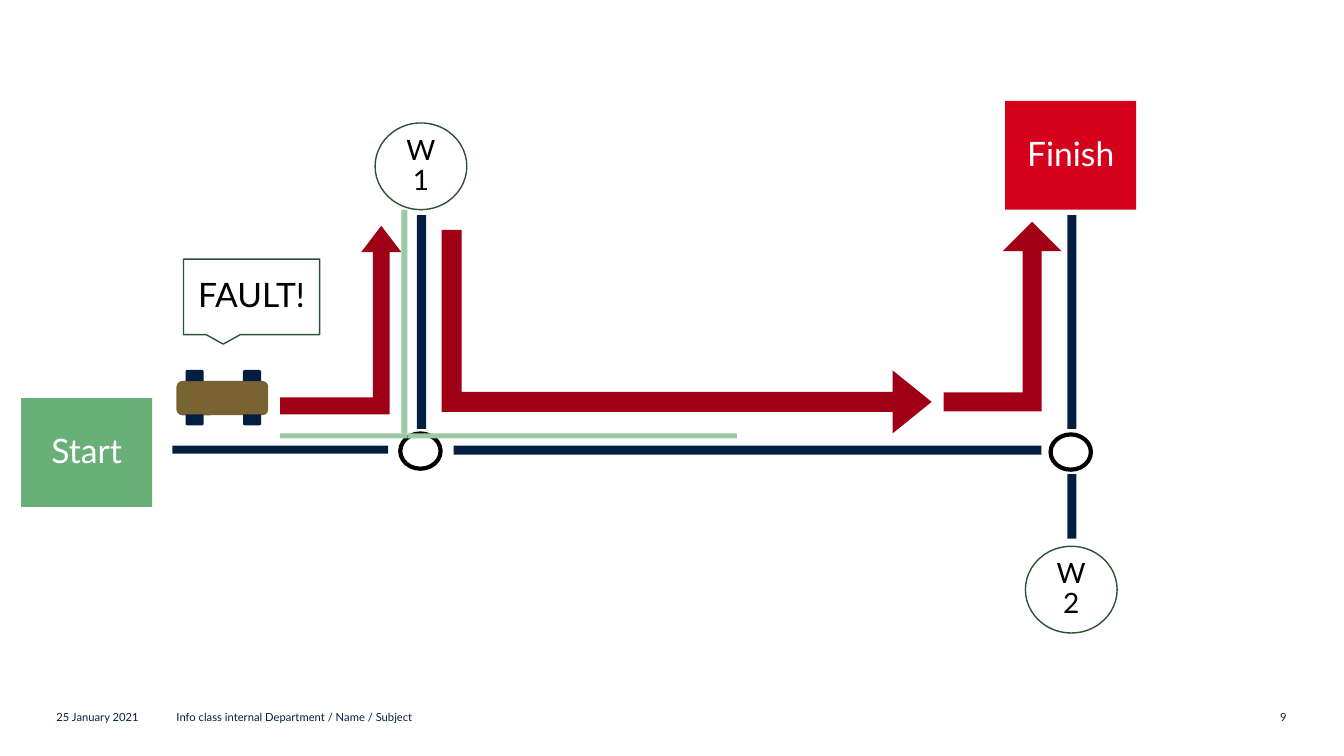
from pptx import Presentation
from pptx.dml.color import RGBColor
from pptx.enum.shapes import MSO_SHAPE
from pptx.enum.text import MSO_ANCHOR, PP_ALIGN
from pptx.util import Pt

PX = 9144  # one hundredth of an inch
FONT = "Lato"
NAVY, BLACK, WHITE = "041E42", "000000", "FFFFFF"
FOREST, GREEN, MINT = "2C5234", "69AF78", "9BC9A5"
RED, CRIMSON, BRONZE = "D6001C", "A00015", "796332"


def color(hex_code):
    return RGBColor.from_string(hex_code)


def scaled(box):
    return [length * PX for length in box]


def write(frame, text, size, ink, align, margins):
    """Fill a text frame with one run; margins are horizontal and vertical px."""
    side, top = margins
    frame.word_wrap = True
    frame.vertical_anchor = MSO_ANCHOR.MIDDLE
    frame.margin_left = frame.margin_right = side * PX
    frame.margin_top = frame.margin_bottom = top * PX
    paragraph = frame.paragraphs[0]
    paragraph.alignment = align
    run = paragraph.add_run()
    run.text = text
    run.font.name = FONT
    run.font.size = Pt(size)
    run.font.color.rgb = color(ink)
    return paragraph


def add_block(slide, kind, box, fill, outline=None, width=1, rotation=0):
    block = slide.shapes.add_shape(kind, *scaled(box))
    block.shadow.inherit = False
    block.rotation = rotation
    block.fill.solid()
    block.fill.fore_color.rgb = color(fill)
    if outline:
        block.line.color.rgb = color(outline)
        block.line.width = Pt(width)
    else:
        block.line.fill.background()
    return block


def add_label(slide, kind, box, text, size, fill, ink, outline=None):
    label = add_block(slide, kind, box, fill, outline)
    paragraph = write(label.text_frame, text, size, ink, PP_ALIGN.CENTER, (12, 5))
    paragraph.line_spacing = 0.9


def add_waypoint(slide, box, name):
    add_label(slide, MSO_SHAPE.OVAL, box, name, 20, WHITE, BLACK, FOREST)


def add_station(slide, box, name, fill):
    add_label(slide, MSO_SHAPE.RECTANGLE, box, name, 24, fill, WHITE)


def add_bars(slide, left, top, bars, fill):
    """Draw thin bars given as x, y, length, thickness and rotation."""
    for x, y, length, thickness, rotation in bars:
        add_block(slide, MSO_SHAPE.RECTANGLE, (left + x, top + y, length, thickness),
                  fill, rotation=rotation)


def add_roads(slide, left, top):
    for x, y in ((226, 216), (871, 217)):
        add_block(slide, MSO_SHAPE.OVAL, (left + x, top + y, 40, 35), WHITE, BLACK, 3)
    roads = (
        (0, 228, 214, 8, 0),
        (279, 228, 583, 9, 0),
        (141, 101, 212, 9, 90),
        (786, 101, 212, 9, 90),
        (860, 284, 64, 9, 90),
    )
    add_bars(slide, left, top, roads, NAVY)


def add_car(slide, left, top):
    add_block(slide, MSO_SHAPE.ROUNDED_RECTANGLE, (left, top + 11, 91, 34), BRONZE)
    for y, rotation in ((0, 0), (44, 180)):
        for x in (9, 66):
            add_block(slide, MSO_SHAPE.ROUND_2_SAME_RECTANGLE,
                      (left + x, top + y, 18, 11), NAVY, rotation=rotation)


def add_driven_route(slide, left, top):
    """Draw the mint guide lines and the crimson arrows of the car's route."""
    guides = (
        (0, 222, 126, 5, 0),
        (12, 108, 222, 6, 90),
        (126, 222, 327, 5, 0),
    )
    add_bars(slide, left, top, guides, MINT)
    turns = (
        (0, 16, 120, 187, 0, (0.14, 0.165, 0.217)),
        (302, -122, 202, 486, 90, (0.098, 0.155, 0.192)),
        (658, 12, 117, 188, 0, (0.159, 0.25, 0.25)),
    )
    for x, y, width, height, rotation, proportions in turns:
        turn = add_block(slide, MSO_SHAPE.BENT_UP_ARROW,
                         (left + x, top + y, width, height), CRIMSON, rotation=rotation)
        for index, proportion in enumerate(proportions):
            turn.adjustments[index] = proportion


def add_footer(slide, left, top):
    entries = (
        (0, 114, "25 January 2021", PP_ALIGN.LEFT),
        (119, 721, "Info class internal Department / Name / Subject", PP_ALIGN.LEFT),
        (1165, 55, "9", PP_ALIGN.RIGHT),
    )
    for x, width, text, align in entries:
        entry = slide.shapes.add_textbox(*scaled((left + x, top, width, 23)))
        write(entry.text_frame, text, 8, NAVY, align, (0, 0))


def main():
    deck = Presentation()
    deck.slide_width, deck.slide_height = scaled((1333, 750))
    slide = deck.slides.add_slide(deck.slide_layouts[6])

    add_footer(slide, 56, 700)
    add_waypoint(slide, (372, 122, 91, 86), "W1")
    add_waypoint(slide, (1017, 542, 91, 86), "W2")
    add_station(slide, (21, 395, 130, 108), "Start", GREEN)
    add_station(slide, (997, 100, 130, 108), "Finish", RED)
    add_roads(slide, 171, 214)
    add_car(slide, 175, 367)
    add_label(slide, MSO_SHAPE.RECTANGULAR_CALLOUT, (182, 257, 135, 75),
              "FAULT!", 24, WHITE, BLACK, FOREST)
    add_driven_route(slide, 278, 208)
    deck.save("out.pptx")


if __name__ == "__main__":
    main()
